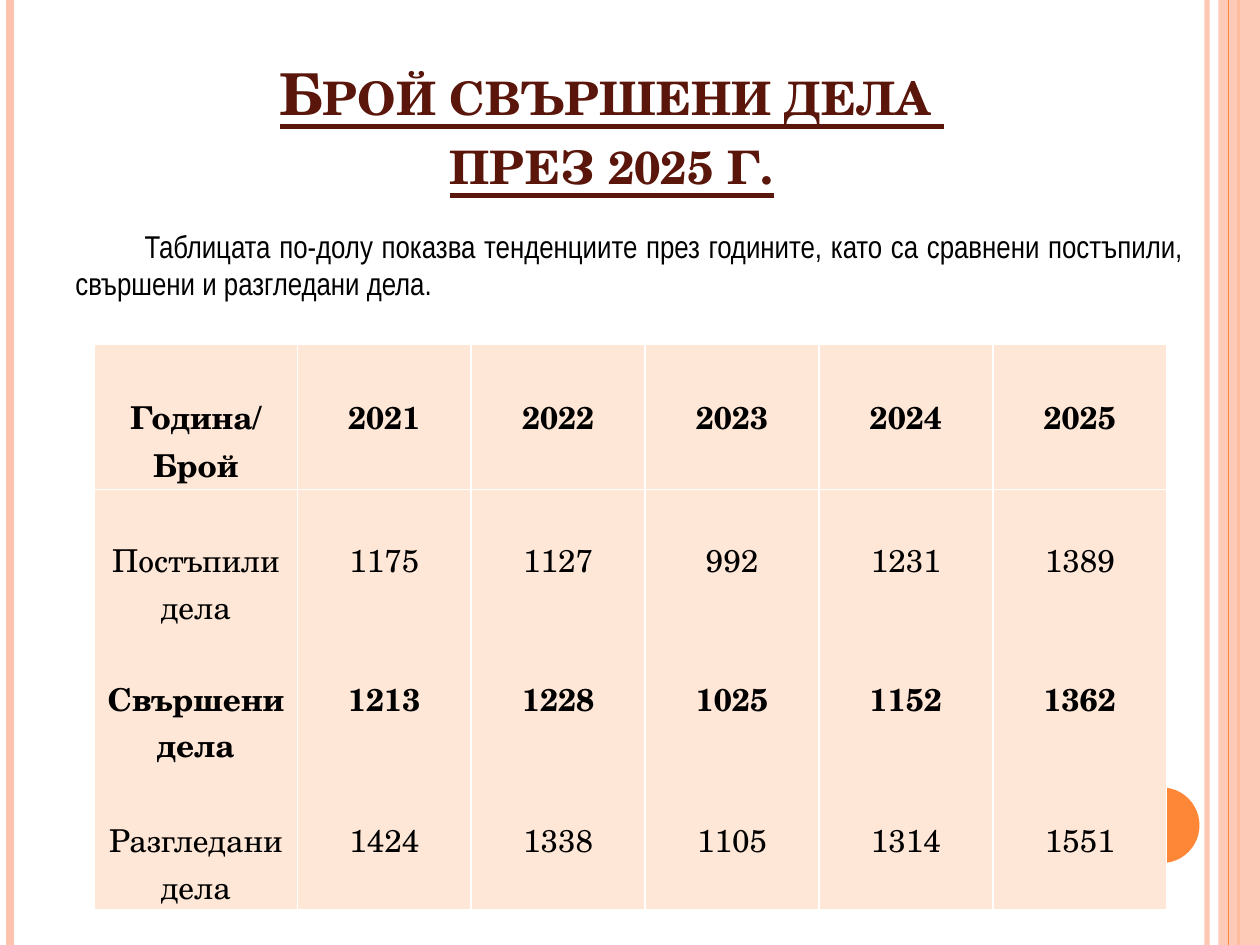
from dataclasses import dataclass

import pptx
import pptx.dml.color
import pptx.enum.shapes
import pptx.enum.text
import pptx.oxml
import pptx.oxml.ns
import pptx.util

RGBColor = pptx.dml.color.RGBColor
Inches = pptx.util.Inches
Pt = pptx.util.Pt
ALIGN = pptx.enum.text.PP_ALIGN
ANCHOR = pptx.enum.text.MSO_ANCHOR
SHAPE = pptx.enum.shapes.MSO_SHAPE

WHITE = RGBColor(0xFF, 0xFF, 0xFF)
BLACK = RGBColor(0x00, 0x00, 0x00)
PINK = RGBColor(0xFE, 0xC3, 0xAE)
ORANGE = RGBColor(0xFE, 0x86, 0x37)
MAROON = RGBColor(0x5A, 0x16, 0x0B)
PEACH = RGBColor(0xFF, 0xE7, 0xD7)
SERIF = "TeX Gyre Schola"
NARROW = "Arial Narrow"


@dataclass
class Stripe:
    x: float
    color: RGBColor
    width: float
    opacity: int = 100


@dataclass
class CaseRow:
    label: str
    counts: list[int]
    bold: bool = False


YEARS = [2021, 2022, 2023, 2024, 2025]
CASES = [
    CaseRow("Постъпили дела", [1175, 1127, 992, 1231, 1389]),
    CaseRow("Свършени дела", [1213, 1228, 1025, 1152, 1362], bold=True),
    CaseRow("Разгледани дела", [1424, 1338, 1105, 1314, 1551]),
]
HEADER_PITCH = 27.7
BODY_PITCH = 26.7


def add_xml(parent, tag: str, **attributes: str):
    return pptx.oxml.ns and parent.append(make_xml(tag, **attributes))


def make_xml(tag: str, content: str = "", **attributes: str):
    pairs = "".join(f' {key}="{value}"' for key, value in attributes.items())
    return pptx.oxml.parse_xml(
        f'<a:{tag} {pptx.oxml.ns.nsdecls("a")}{pairs}>{content}</a:{tag}>')


def set_opacity(properties, percent: int) -> None:
    color = next(properties.iter(pptx.oxml.ns.qn("a:srgbClr")))
    color.append(make_xml("alpha", val=str(percent * 1000)))


def add_stripe(page, stripe: Stripe) -> None:
    x = Inches(stripe.x)
    line = page.shapes.add_connector(
        pptx.enum.shapes.MSO_CONNECTOR.STRAIGHT, x, 0, x, Inches(7.5))
    line.line.color.rgb = stripe.color
    line.line.width = Pt(stripe.width)
    properties = line._element.spPr
    if stripe.opacity < 100:
        set_opacity(properties, stripe.opacity)
    properties.append(make_xml("effectLst"))


def add_plain_shape(page, kind, color: RGBColor, left: float, top: float,
                    width: float, height: float):
    shape = page.shapes.add_shape(
        kind, Inches(left), Inches(top), Inches(width), Inches(height))
    shape.shadow.inherit = False
    shape.fill.solid()
    shape.fill.fore_color.rgb = color
    shape.line.fill.background()
    return shape


def add_span(para, text: str, font: str = SERIF, size: float = 18,
             color: RGBColor = BLACK, bold: bool = False):
    span = para.add_run()
    span.text = text
    span.font.name = font
    span.font.size = Pt(size)
    span.font.color.rgb = color
    span.font.bold = bold
    return span


def indent_first_line(para, inches: float) -> None:
    properties = para._p.get_or_add_pPr()
    properties.set("marL", "0")
    properties.set("indent", str(Inches(inches)))


def format_cell(cell, top_margin: float) -> None:
    cell.margin_left = cell.margin_right = Inches(0.05)
    cell.margin_top, cell.margin_bottom = Pt(top_margin), 0
    cell.vertical_anchor = ANCHOR.TOP
    properties = cell._tc.get_or_add_tcPr()
    for side in ("lnL", "lnR", "lnT", "lnB"):
        fill = f'<a:solidFill><a:srgbClr val="{WHITE}"/></a:solidFill>'
        properties.append(make_xml(side, fill, w=str(Pt(1))))
    cell.fill.solid()
    cell.fill.fore_color.rgb = PEACH


def fill_cell(cell, lines: list[tuple[str, bool]], pitch: float, gap: float) -> None:
    """Write one paragraph per line, one line pitch below the cell top."""
    format_cell(cell, pitch)
    for index, (text, bold) in enumerate(lines):
        para = cell.text_frame.paragraphs[0] if index == 0 else cell.text_frame.add_paragraph()
        para.alignment = ALIGN.CENTER
        para.line_spacing = Pt(pitch)
        if index:
            para.space_before = Pt(gap)
        add_span(para, text, bold=bold)


def add_title(page) -> None:
    title = page.shapes.title
    title.left, title.top = Inches(0.2), Inches(0.36)
    title.width, title.height = Inches(9.31), Inches(1.25)
    frame = title.text_frame
    frame.word_wrap = True
    frame.auto_size = pptx.enum.text.MSO_AUTO_SIZE.NONE
    frame.vertical_anchor = ANCHOR.BOTTOM
    para = frame.paragraphs[0]
    para.alignment = ALIGN.CENTER
    for index, text in enumerate(["Брой свършени дела ", "през 2025 г."]):
        if index:
            para.add_line_break()
        span = add_span(para, text, size=33, color=MAROON, bold=True)
        span.font.underline = True
        span.font._element.set("cap", "small")


def add_intro(page) -> None:
    box = page.shapes.add_textbox(Inches(0.5), Inches(1.75), Inches(8.99), Inches(0.8))
    box.text_frame.word_wrap = True
    para = box.text_frame.paragraphs[0]
    para.alignment = ALIGN.JUSTIFY
    indent_first_line(para, 0.55)
    add_span(para, "Таблицата по-долу показва тенденциите през годините, като са "
                   "сравнени постъпили, свършени и разгледани дела.", font=NARROW)


def add_case_table(page) -> None:
    table = page.shapes.add_table(
        2, 1 + len(YEARS), Inches(0.75), Inches(2.73), Inches(8.5), Inches(4.49)).table
    table.horz_banding = False
    for index, column in enumerate(table.columns):
        column.width = Inches(1.38 if index else 1.61)
    table.rows[0].height, table.rows[1].height = Inches(1.15), Inches(3.34)

    # Row labels wrap to two lines, so they need one line less between them
    corner = table.cell(0, 0)
    fill_cell(corner, [("Година/", True), ("Брой", True)], HEADER_PITCH, 0)
    indent_first_line(corner.text_frame.paragraphs[1], -0.14)
    fill_cell(table.cell(1, 0), [(case.label, case.bold) for case in CASES],
              BODY_PITCH, BODY_PITCH)

    for index, year in enumerate(YEARS):
        fill_cell(table.cell(0, index + 1), [(str(year), True)], HEADER_PITCH, 0)
        counts = [(str(case.counts[index]), case.bold) for case in CASES]
        fill_cell(table.cell(1, index + 1), counts, BODY_PITCH, 2 * BODY_PITCH)


def main() -> None:
    deck = pptx.Presentation()
    deck.slide_width, deck.slide_height = Inches(10), Inches(7.5)
    page = deck.slides.add_slide(deck.slide_layouts[5])
    page.background.fill.solid()
    page.background.fill.fore_color.rgb = WHITE

    # Side decoration
    for stripe in (Stripe(9.58, PINK, 3, 93), Stripe(0.08, PINK, 4.5),
                   Stripe(9.83, ORANGE, 1.5)):
        add_stripe(page, stripe)
    band = add_plain_shape(page, SHAPE.RECTANGLE, PINK, 9.67, 0, 0.33, 7.5)
    set_opacity(band._element.spPr, 87)
    add_stripe(page, Stripe(9.75, ORANGE, 0.75))
    add_plain_shape(page, SHAPE.OVAL, ORANGE, 8.92, 6.25, 0.6, 0.6)

    # Content
    add_title(page)
    add_intro(page)
    add_case_table(page)
    deck.save("out.pptx")


if __name__ == "__main__":
    main()
